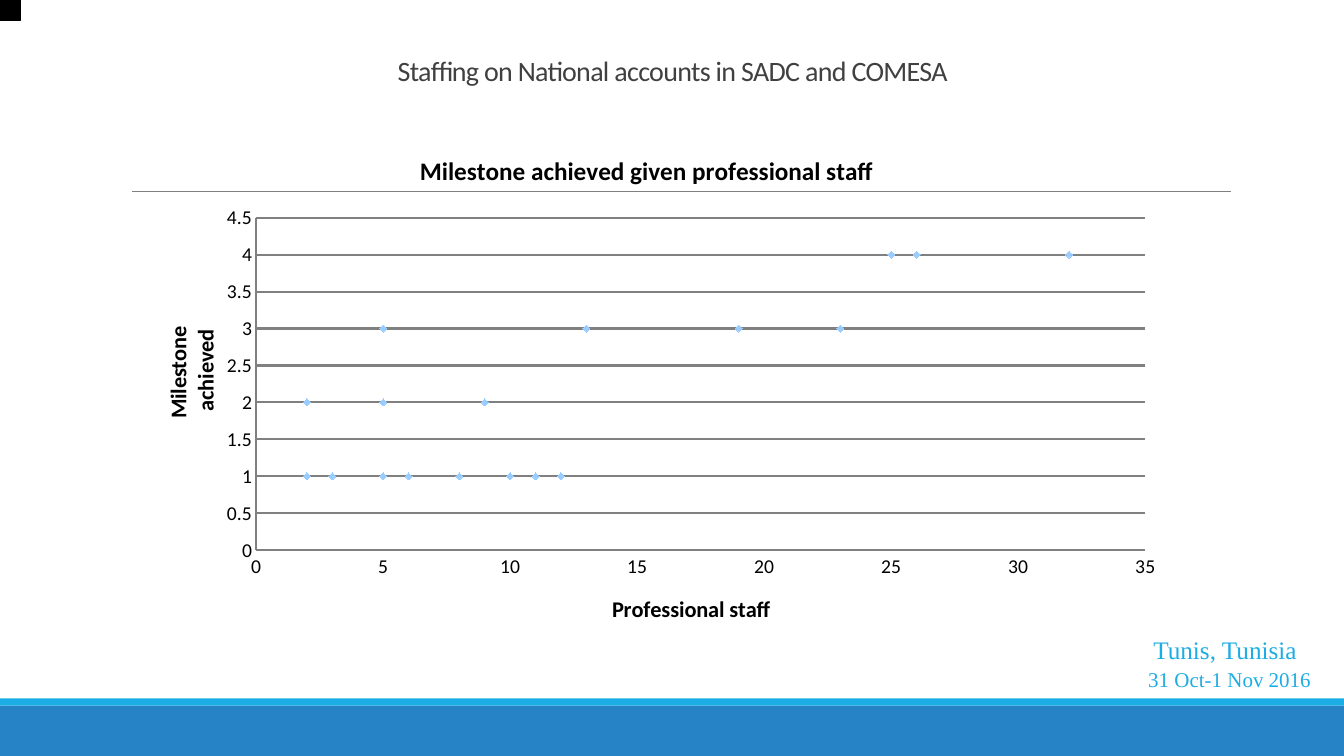
from lxml import etree
from pptx import Presentation
from pptx import util as u
from pptx.chart.data import XyChartData
from pptx.dml.color import RGBColor
from pptx.enum import chart as ch, shapes, text
from pptx.oxml.ns import qn

COLORS = {"band": "2683C6", "accent": "1CADE4", "rule": "808080", "heading": "404040",
          "black": "000000", "marker": "99CCFF"}
HEADING = "Staffing on National accounts in SADC and COMESA"
CHART_TITLE = ["Milestone achieved given professional staff "]
STAFF_TITLE = ["Professional staff"]
MILESTONE_TITLE = ["Milestone", " achieved"]
STAFF = [32, 26, 25, 23, 19, 13, 12, 11, 10, 9, 8, 6, 5, 5, 5, 3, 2, 2]
MILESTONES = [4, 4, 4, 3, 3, 3, 1, 1, 1, 2, 1, 1, 3, 1, 2, 1, 1, 2]
CHART_BOX = (1.22, 1.33, 10.44, 5.08)
PLOT_BOX = (1.32, 0.83, 8.82, 3.3)
BANDS = [
    ((0, 7, 13.33, 0.5), "band", False),
    ((0, 6.93, 13.33, 0.07), "accent", False),
    ((0, -0.2, 0.2, 0.4), "black", True),
]
VENUE = [
    ("Tunis, Tunisia", (11.33, 6.24, 1.64, 0.4), 18),
    ("31 Oct-1 Nov 2016", (11.28, 6.56, 1.83, 0.35), 15),
]


def rgb(name):
    return RGBColor.from_string(COLORS[name])


def inches(box):
    return [u.Inches(v) for v in box]


def style(font, size, color, name="Calibri", bold=False):
    font.size, font.name, font.bold = u.Pt(size), name, bold
    font.color.rgb = rgb(color)


def draw_line(line, color, width):
    line.color.rgb = rgb(color)
    line.width = u.Pt(width)


def place(element, index, box, inner=False):
    for old in element.findall(qn("c:layout")):
        element.remove(old)
    layout = etree.Element(qn("c:layout"))
    manual = etree.SubElement(layout, qn("c:manualLayout"))
    settings = {"layoutTarget": "inner"} if inner else {}
    settings.update(xMode="edge", yMode="edge")
    chart_size = CHART_BOX[2:] * 2
    settings.update((tag, length / full) for tag, length, full in zip("xywh", box, chart_size))
    for tag, value in settings.items():
        etree.SubElement(manual, qn("c:" + tag)).set("val", str(value))
    element.insert(index, layout)


def write_title(title, lines, size, corner):
    frame = title.text_frame
    for i, line in enumerate(lines):
        paragraph = frame.add_paragraph() if i else frame.paragraphs[0]
        paragraph.text = line
        style(paragraph.font, size, "black", bold=True)
    place(title._element, 1, corner)


def add_bands(slide):
    for box, color, outlined in BANDS:
        band = slide.shapes.add_shape(shapes.MSO_SHAPE.RECTANGLE, *inches(box))
        band.shadow.inherit = False
        band.fill.solid()
        band.fill.fore_color.rgb = rgb(color)
        if outlined:
            draw_line(band.line, color, 0.75)
        else:
            band.line.fill.background()
    rule = slide.shapes.add_connector(shapes.MSO_CONNECTOR.STRAIGHT, *inches((1.31, 1.9, 12.21, 1.9)))
    draw_line(rule.line, "rule", 0.5)
    etree.SubElement(rule._element.spPr, qn("a:effectLst"))


def add_heading(slide):
    heading = slide.shapes.title
    heading.left, heading.top, heading.width, heading.height = inches((0.67, 0.3, 12, 0.62))
    heading.text_frame.vertical_anchor = text.MSO_ANCHOR.BOTTOM
    paragraph = heading.text_frame.paragraphs[0]
    run = paragraph.add_run()
    run.text = HEADING
    run.font._element.set("spc", "-50")
    paragraph.alignment = text.PP_ALIGN.CENTER
    paragraph.line_spacing = 0.85
    style(paragraph.font, 20, "heading")


def add_venue(slide):
    for line, box, size in VENUE:
        frame = slide.shapes.add_textbox(*inches(box)).text_frame
        frame.word_wrap = False
        paragraph = frame.paragraphs[0]
        paragraph.text = line
        paragraph.alignment = text.PP_ALIGN.CENTER
        style(paragraph.font, size, "accent", "Times New Roman")


def add_staff_chart(slide):
    data = XyChartData()
    points = data.add_series("Series 1")
    for staff, milestone in zip(STAFF, MILESTONES):
        points.add_data_point(staff, milestone)
    chart = slide.shapes.add_chart(ch.XL_CHART_TYPE.XY_SCATTER, *inches(CHART_BOX), data).chart
    chart.has_legend = False
    style(chart.font, 14, "black")
    chart.plots[0].vary_by_categories = False
    series = chart.plots[0].series[0]
    series.smooth = False
    series.format.line.fill.background()
    series.marker.style = ch.XL_MARKER_STYLE.DIAMOND
    series.marker.size = 5
    series.marker.format.fill.solid()
    series.marker.format.fill.fore_color.rgb = rgb("marker")
    series.marker.format.line.color.rgb = rgb("marker")

    for axis, top, step in ((chart.category_axis, 35, 5), (chart.value_axis, 4.5, 0.5)):
        axis.minimum_scale, axis.maximum_scale, axis.major_unit = 0, top, step
        axis.major_tick_mark = axis.minor_tick_mark = ch.XL_TICK_MARK.NONE
        axis.tick_labels.number_format = "General"
        axis.tick_labels.number_format_is_linked = False
        draw_line(axis.format.line, "rule", 1.5)
    chart.category_axis.has_major_gridlines = False
    chart.value_axis.has_major_gridlines = True
    draw_line(chart.value_axis.major_gridlines.format.line, "rule", 1.5)

    chart.has_title = True
    write_title(chart.chart_title, CHART_TITLE, 18, (2.9, 0.15))
    write_title(chart.category_axis.axis_title, STAFF_TITLE, 16, (4.81, 4.52))
    write_title(chart.value_axis.axis_title, MILESTONE_TITLE, 16, (0.37, 1.88))
    plot_area = chart._chartSpace.find(".//" + qn("c:plotArea"))
    place(plot_area, 0, PLOT_BOX, inner=True)


def main():
    deck = Presentation()
    deck.slide_width, deck.slide_height = inches((13.33, 7.5))
    slide = deck.slides.add_slide(deck.slide_layouts[5])
    add_bands(slide)
    add_venue(slide)
    add_heading(slide)
    add_staff_chart(slide)
    deck.save("out.pptx")


if __name__ == "__main__":
    main()
